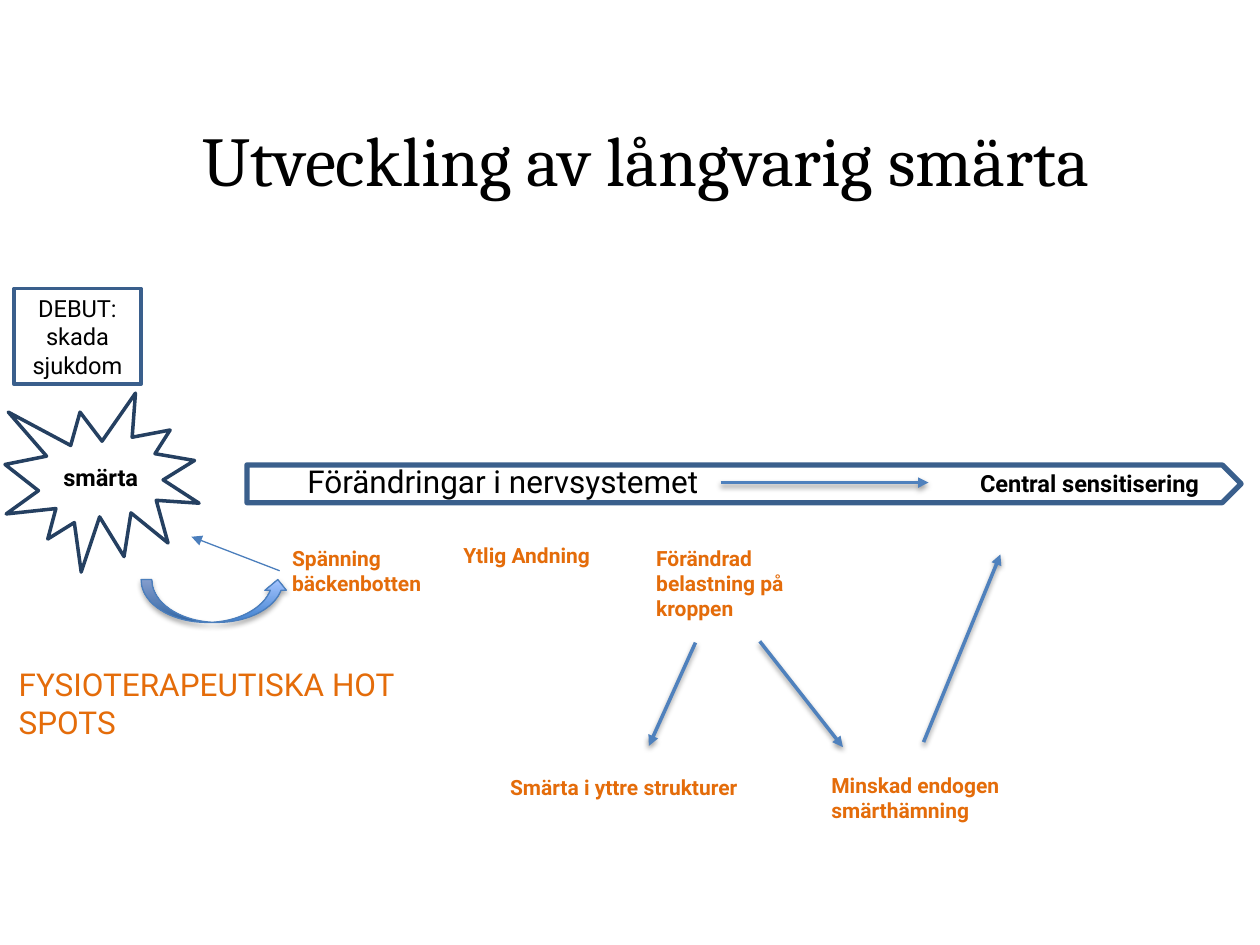
from lxml.etree import SubElement
from pptx import Presentation
from pptx.dml.color import RGBColor
from pptx.enum.shapes import MSO_CONNECTOR, MSO_SHAPE
from pptx.enum.text import MSO_ANCHOR, PP_ALIGN
from pptx.oxml.ns import qn
from pptx.util import Inches, Pt

COLORS = {
    "black": "000000",
    "navy": "254061",
    "frame": "3A5F8C",
    "arrow": "4F81BD",
    "thin": "4B7EBC",
    "orange": "E46C0A",
    "grad_start": "3F80CE",
    "grad_end": "A4C4FF",
}
FONT = "Roboto"


def style_text(tf, lines, size, color, bold=False, align=PP_ALIGN.LEFT):
    """Fill the frame with one paragraph per line, all in the same font."""
    for i, line in enumerate(lines):
        p = tf.paragraphs[0] if i == 0 else tf.add_paragraph()
        p.text = line
        p.alignment = align
        p.font.name = FONT
        p.font.size = Pt(size)
        p.font.bold = bold
        p.font.color.rgb = RGBColor.from_string(COLORS[color])


def style_outline(sp, color, width, shadow_alpha=None):
    """Set the line, then the effects: a soft drop shadow or none."""
    sp.line.color.rgb = RGBColor.from_string(COLORS[color])
    sp.line.width = Pt(width)
    effects = SubElement(sp._element.spPr, qn("a:effectLst"))
    if shadow_alpha:
        shadow = SubElement(effects, qn("a:outerShdw"), blurRad=str(Pt(3.1)),
                            dist=str(Pt(1.7)), dir="5400000", rotWithShape="0")
        clr = SubElement(shadow, qn("a:srgbClr"), val=COLORS["black"])
        SubElement(clr, qn("a:alpha"), val=str(shadow_alpha * 1000))


prs = Presentation()
prs.slide_width = Inches(10)
prs.slide_height = Inches(7.5)
s = prs.slides.add_slide(prs.slide_layouts[5])

# Title
title = s.shapes.title
title.left, title.top, title.width, title.height = map(Inches, (1.51, 0.57, 7.76, 1.38))
title.text_frame.vertical_anchor = MSO_ANCHOR.MIDDLE
p = title.text_frame.paragraphs[0]
p.text = "Utveckling av långvarig smärta"
p.alignment = PP_ALIGN.LEFT
p.font.name = "Cambria"
p.font.size = Pt(40)
p.font.color.rgb = RGBColor.from_string(COLORS["black"])

# Outlined shapes: onset of pain and the timeline arrow
outlined = [
    (MSO_SHAPE.EXPLOSION1, (0.04, 3.12, 1.54, 1.42), "navy", 2, ["smärta"], True),
    (MSO_SHAPE.RECTANGLE, (0.11, 2.29, 1.01, 0.76), "frame", 2,
     ["DEBUT:", "skada", "sjukdom"], False),
    (MSO_SHAPE.RIGHT_ARROW, (1.96, 3.69, 7.89, 0.3), "frame", 3, [], False),
]
for kind, box, color, width, lines, bold in outlined:
    sp = s.shapes.add_shape(kind, *map(Inches, box))
    sp.fill.background()
    style_outline(sp, color, width)
    sp.text_frame.word_wrap = False
    sp.text_frame.vertical_anchor = MSO_ANCHOR.MIDDLE
    style_text(sp.text_frame, lines, 13.5, "black", bold, PP_ALIGN.CENTER)
    if kind == MSO_SHAPE.RIGHT_ARROW:
        sp.adjustments[0] = 1
        sp.adjustments[1] = 0.5

# Curved arrow from pain to tension
curve = s.shapes.add_shape(MSO_SHAPE.CURVED_UP_ARROW, *map(Inches, (1.12, 4.6, 1.17, 0.34)))
curve.fill.gradient()
curve.fill.gradient_angle = 90
for stop, name in zip(curve.fill.gradient_stops, ("grad_start", "grad_end")):
    stop.color.rgb = RGBColor.from_string(COLORS[name])
style_outline(curve, "thin", 0.75, 35)

# Straight arrows
arrows = [
    ((2.22, 4.53), (1.52, 4.26), "thin", 0.75, None),
    ((5.52, 5.1), (5.15, 5.92), "arrow", 2, 38),
    ((6.03, 5.09), (6.69, 5.93), "arrow", 2, 38),
    ((7.33, 5.89), (7.94, 4.4), "arrow", 2, 38),
    ((5.72, 3.83), (7.37, 3.83), "arrow", 2, 38),
]
for start, end, color, width, shadow_alpha in arrows:
    line = s.shapes.add_connector(MSO_CONNECTOR.STRAIGHT, *map(Inches, start + end))
    style_outline(line, color, width, shadow_alpha)
    SubElement(line.line._get_or_add_ln(), qn("a:tailEnd"), type="triangle")

# Labels
labels = [
    ((2.34, 3.62, 3.99, 0.4), ["Förändringar i nervsystemet"], 18, "black", False),
    ((7.68, 3.67, 2.17, 0.33), ["Central sensitisering"], 13.5, "black", True),
    ((2.22, 4.28, 1.36, 0.5), ["Spänning", "bäckenbotten"], 12, "orange", True),
    ((3.58, 4.26, 1.34, 0.3), ["Ytlig Andning"], 12, "orange", True),
    ((5.11, 4.28, 1.59, 0.71), ["Förändrad belastning på kroppen"], 12, "orange", True),
    ((0.05, 5.23, 4, 0.71), ["FYSIOTERAPEUTISKA HOT SPOTS"], 18, "orange", False),
    ((3.95, 6.1, 2.3, 0.3), ["Smärta i yttre strukturer"], 12, "orange", True),
    ((6.5, 6.08, 2.15, 0.5), ["Minskad endogen smärthämning"], 12, "orange", True),
]
for box, lines, size, color, bold in labels:
    tf = s.shapes.add_textbox(*map(Inches, box)).text_frame
    tf.word_wrap = True
    style_text(tf, lines, size, color, bold)

prs.save("out.pptx")
